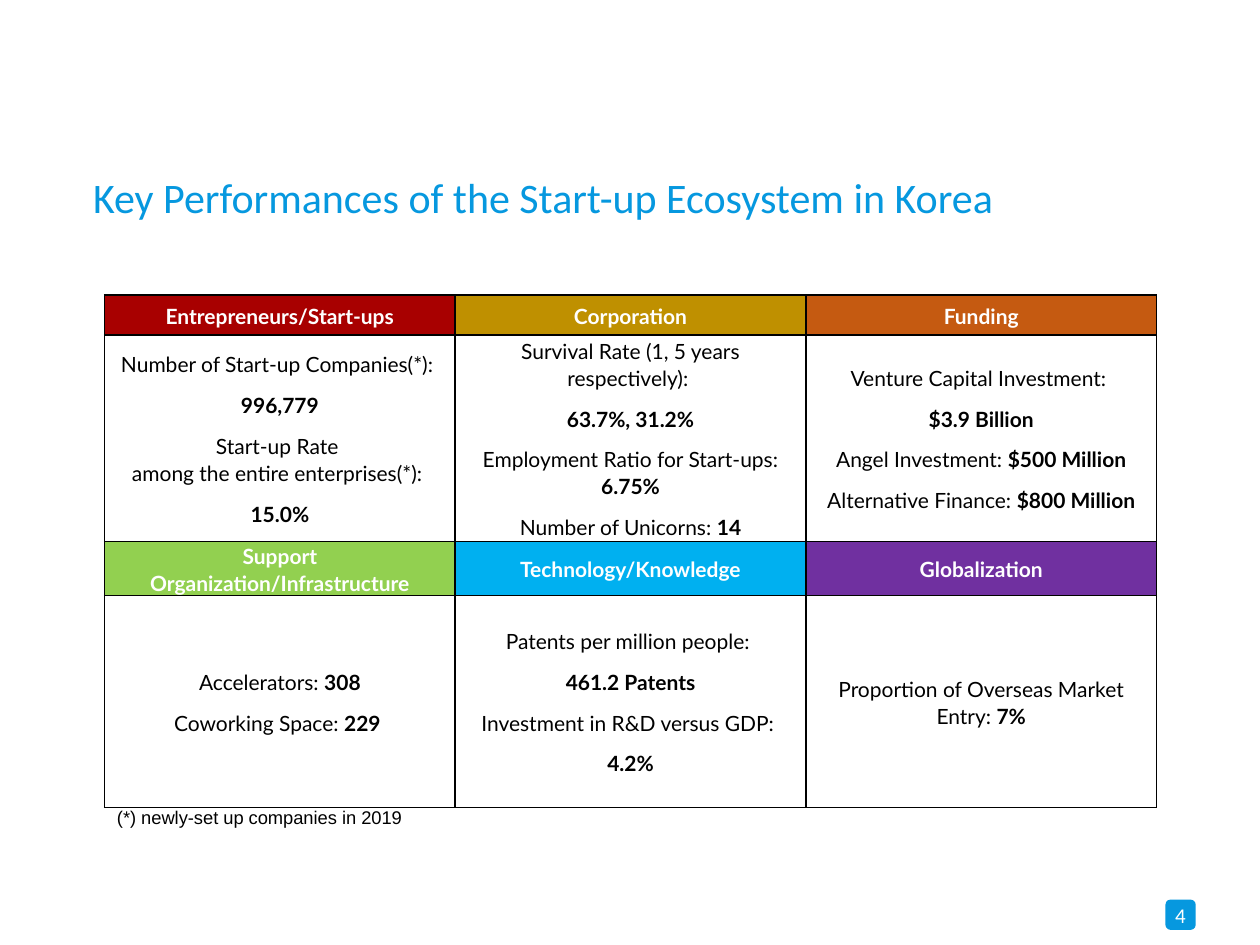
"""Build the slide on key performances of the Korean start-up ecosystem."""
import lxml.etree
import pptx
import pptx.dml.color
import pptx.enum.shapes
import pptx.enum.text
import pptx.oxml.ns
import pptx.util

COLORS = {
    "accent": "0698DF", "white": "FFFFFF", "black": "000000",
    "startups": "A80000", "corporation": "BF9000", "funding": "C55A11",
    "support": "92D050", "technology": "00B0F0", "globalization": "7030A0",
}

THEMES = [
    [("Entrepreneurs/Start-ups", "startups",
      ["Number of Start-up Companies(*): ", "|996,779",
       "Start-up Rate \namong the entire enterprises(*): ", "|15.0%"]),
     ("Corporation", "corporation",
      ["Survival Rate (1, 5 years respectively): ", "|63.7%, 31.2%",
       "Employment Ratio for Start-ups: |6.75%", "Number of Unicorns: |14"]),
     ("Funding", "funding",
      ["Venture Capital Investment: ", "|$3.9 Billion",
       "Angel Investment: |$500 Million", "Alternative Finance: |$800 Million"])],
    [("Support Organization/Infrastructure", "support",
      ["Accelerators: |308", "Coworking Space: |229 "]),
     ("Technology/Knowledge", "technology",
      ["Patents per million people: ", "|461.2 Patents",
       "Investment in R&D versus GDP: ", "|4.2%"]),
     ("Globalization", "globalization",
      ["Proportion of Overseas Market Entry: |7%"])],
]


class Deck:
    """Slide builder on a grid of 100 columns by 75 rows."""

    def __init__(self):
        self.presentation = pptx.Presentation()
        self.presentation.slide_width = pptx.util.Inches(10)
        self.presentation.slide_height = pptx.util.Inches(7.5)
        self.unit = self.presentation.slide_width / 100
        self.slide = self.presentation.slides.add_slide(self.presentation.slide_layouts[6])

    def grid(self, *lengths):
        """Turn grid lengths into slide units."""
        return [round(length * self.unit) for length in lengths]

    def color(self, name):
        """Look up a colour."""
        return pptx.dml.color.RGBColor.from_string(COLORS[name])

    def paint(self, target, name):
        """Fill a shape or cell."""
        target.fill.solid()
        target.fill.fore_color.rgb = self.color(name)

    def style(self, paragraph, font, size, color, bold=None):
        """Set the font of a paragraph."""
        paragraph.font.name = font
        paragraph.font.size = pptx.util.Pt(size)
        paragraph.font.color.rgb = self.color(color)
        paragraph.font.bold = bold

    def text(self, area, words, font, size, color, anchor="TOP", spacing=None):
        """Add a wrapped line of text."""
        frame = self.slide.shapes.add_textbox(*self.grid(*area)).text_frame
        frame.word_wrap = True
        frame.vertical_anchor = pptx.enum.text.MSO_ANCHOR[anchor]
        paragraph = frame.paragraphs[0]
        paragraph.text = words
        paragraph.line_spacing = spacing
        self.style(paragraph, font, size, color)

    def badge(self, area, words):
        """Add the rounded page number."""
        badge = self.slide.shapes.add_shape(
            pptx.enum.shapes.MSO_SHAPE.ROUNDED_RECTANGLE, *self.grid(*area))
        badge.shadow.inherit = False
        self.paint(badge, "accent")
        badge.line.fill.background()
        frame = badge.text_frame
        frame.margin_left = frame.margin_right = frame.margin_top = frame.margin_bottom = 0
        frame.vertical_anchor = pptx.enum.text.MSO_ANCHOR.MIDDLE
        number = frame.paragraphs[0]
        number.text = words
        number.alignment = pptx.enum.text.PP_ALIGN.CENTER
        self.style(number, "Calibri", 12, "white")

    def border(self, cell):
        """Draw thin black lines around a cell."""
        qn = pptx.oxml.ns.qn
        properties = cell._tc.get_or_add_tcPr()
        for position, side in enumerate(("a:lnL", "a:lnR", "a:lnT", "a:lnB")):
            line = lxml.etree.Element(qn(side), w=str(pptx.util.Pt(1)))
            fill = lxml.etree.SubElement(line, qn("a:solidFill"))
            lxml.etree.SubElement(fill, qn("a:srgbClr"), val=COLORS["black"])
            properties.insert(position, line)

    def cell(self, cell, lines, fill, color):
        """Write lines in a cell, bold after the bar."""
        self.paint(cell, fill)
        self.border(cell)
        cell.margin_left = cell.margin_right = pptx.util.Inches(0.06)
        cell.margin_top = cell.margin_bottom = 0
        cell.vertical_anchor = pptx.enum.text.MSO_ANCHOR.MIDDLE
        for index, line in enumerate(lines):
            frame = cell.text_frame
            paragraph = frame.add_paragraph() if index else frame.paragraphs[0]
            paragraph.alignment = pptx.enum.text.PP_ALIGN.CENTER
            paragraph.line_spacing = 1.07
            paragraph.space_after = pptx.util.Pt(8)
            label, _, figure = line.partition("|")
            mixed = bool(label and figure)
            self.style(paragraph, "Lato", 12, color, None if mixed else bool(figure))
            if mixed:
                for words, bold in ((label, False), (figure, True)):
                    run = paragraph.add_run()
                    run.text = words
                    run.font.bold = bold
            else:
                paragraph.text = (label or figure).replace("\n", "\v")

    def table(self, area, heights, themes):
        """Add a table with a heading row above each row of figures."""
        columns = len(themes[0])
        table = self.slide.shapes.add_table(len(heights), columns, *self.grid(*area)).table
        table.first_row = table.horz_banding = False
        for row, height in zip(table.rows, self.grid(*heights)):
            row.height = height
        for band, group in enumerate(themes):
            for column, (heading, fill, figures) in enumerate(group):
                self.cell(table.cell(2 * band, column), ["|" + heading], fill, "white")
                self.cell(table.cell(2 * band + 1, column), figures, "white", "black")


def main():
    """Build and save the slide."""
    deck = Deck()
    deck.badge((92.5, 71.4, 2.4, 2.4), "4")
    deck.text((6.4, 9.9, 87.2, 12), "Key Performances of the Start-up Ecosystem in Korea",
              "Calibri", 24, "accent", "MIDDLE", 0.9)
    deck.table((8.3, 23.4, 83.5, 39.3), (3.2, 16.4, 2.9, 16.8), THEMES)
    deck.text((8.3, 63.5, 83.5, 2.9), "(*) newly-set up companies in 2019",
              "Arial", 10.5, "black")
    deck.presentation.save("out.pptx")


if __name__ == "__main__":
    main()
